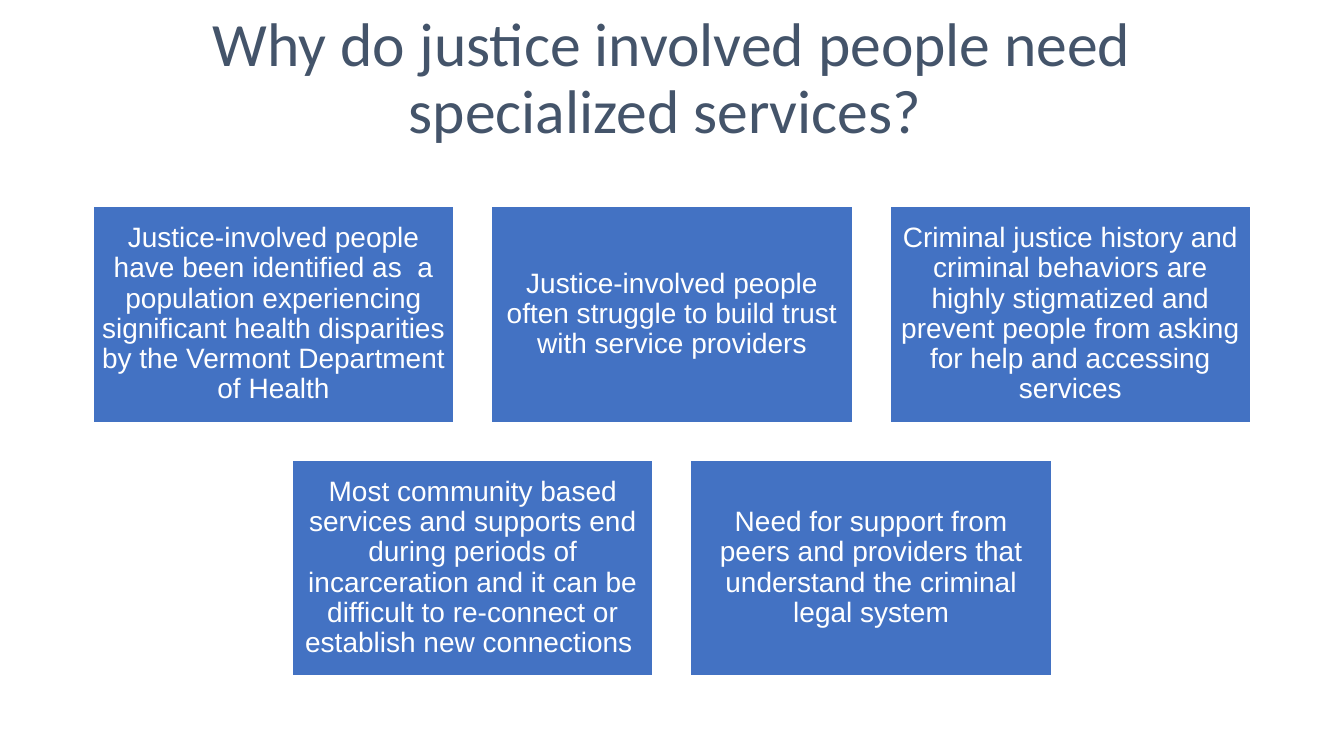
from dataclasses import dataclass

from pptx import Presentation
from pptx.dml.color import RGBColor
from pptx.enum.shapes import MSO_SHAPE
from pptx.enum.text import MSO_ANCHOR, PP_ALIGN
from pptx.util import Cm, Pt

# Content
TITLE = "Why do justice involved people need specialized services? "
REASON_ROWS = [
    [
        "Justice-involved people have been identified as  a population experiencing "
        "significant health disparities by the Vermont Department of Health",
        "Justice-involved people often struggle to build trust with service providers",
        "Criminal justice history and criminal behaviors are highly stigmatized and "
        "prevent people from asking for help and accessing services",
    ],
    [
        "Most community based services and supports end during periods of "
        "incarceration and it can be difficult to re-connect or establish new connections ",
        "Need for support from peers and providers that understand the criminal legal system",
    ],
]


@dataclass(frozen=True)
class Theme:
    white: RGBColor = RGBColor.from_string("FFFFFF")
    card: RGBColor = RGBColor.from_string("4372C3")
    heading: RGBColor = RGBColor.from_string("44546A")
    title_font: str = "Calibri"
    body_font: str = "Arial"
    title_size: int = 44
    body_size: int = 20
    border: int = 2


THEME = Theme()

# Layout in centimetres
SLIDE_WIDTH, SLIDE_HEIGHT = 33.87, 19.05
TITLE_BOX = (2.34, 0.18, 29.21, 3.68)
CARD_WIDTH, CARD_HEIGHT = 9.13, 5.48
GAP = 0.91
CARDS_TOP = 5.18


def write_text(shape, text, font, size, color, inset_x, inset_y):
    frame = shape.text_frame
    frame.text = text
    frame.word_wrap = True
    frame.vertical_anchor = MSO_ANCHOR.MIDDLE
    frame.margin_left = frame.margin_right = Cm(inset_x)
    frame.margin_top = frame.margin_bottom = Cm(inset_y)
    para = frame.paragraphs[0]
    para.alignment = PP_ALIGN.CENTER
    para.line_spacing = 0.9
    span = para.runs[0]
    span.font.name = font
    span.font.size = Pt(size)
    span.font.color.rgb = color


def add_card(page, text, left, top):
    card = page.shapes.add_shape(
        MSO_SHAPE.RECTANGLE, Cm(left), Cm(top), Cm(CARD_WIDTH), Cm(CARD_HEIGHT))
    card.shadow.inherit = False
    card.fill.solid()
    card.fill.fore_color.rgb = THEME.card
    card.line.color.rgb = THEME.white
    card.line.width = Pt(THEME.border)
    write_text(card, text, THEME.body_font, THEME.body_size, THEME.white, 0.2, 0.2)


def main():
    deck = Presentation()
    deck.slide_width, deck.slide_height = Cm(SLIDE_WIDTH), Cm(SLIDE_HEIGHT)
    page = deck.slides.add_slide(deck.slide_layouts[6])
    page.background.fill.solid()
    page.background.fill.fore_color.rgb = THEME.white

    # Title
    title = page.shapes.add_textbox(*map(Cm, TITLE_BOX))
    write_text(title, TITLE, THEME.title_font, THEME.title_size, THEME.heading, 0.25, 0.13)

    # Cards, each row centred on the slide
    for row, reasons in enumerate(REASON_ROWS):
        row_width = len(reasons) * (CARD_WIDTH + GAP) - GAP
        row_left = (SLIDE_WIDTH - row_width) / 2
        top = CARDS_TOP + row * (CARD_HEIGHT + GAP)
        for column, reason in enumerate(reasons):
            add_card(page, reason, row_left + column * (CARD_WIDTH + GAP), top)

    deck.save("out.pptx")


if __name__ == "__main__":
    main()
